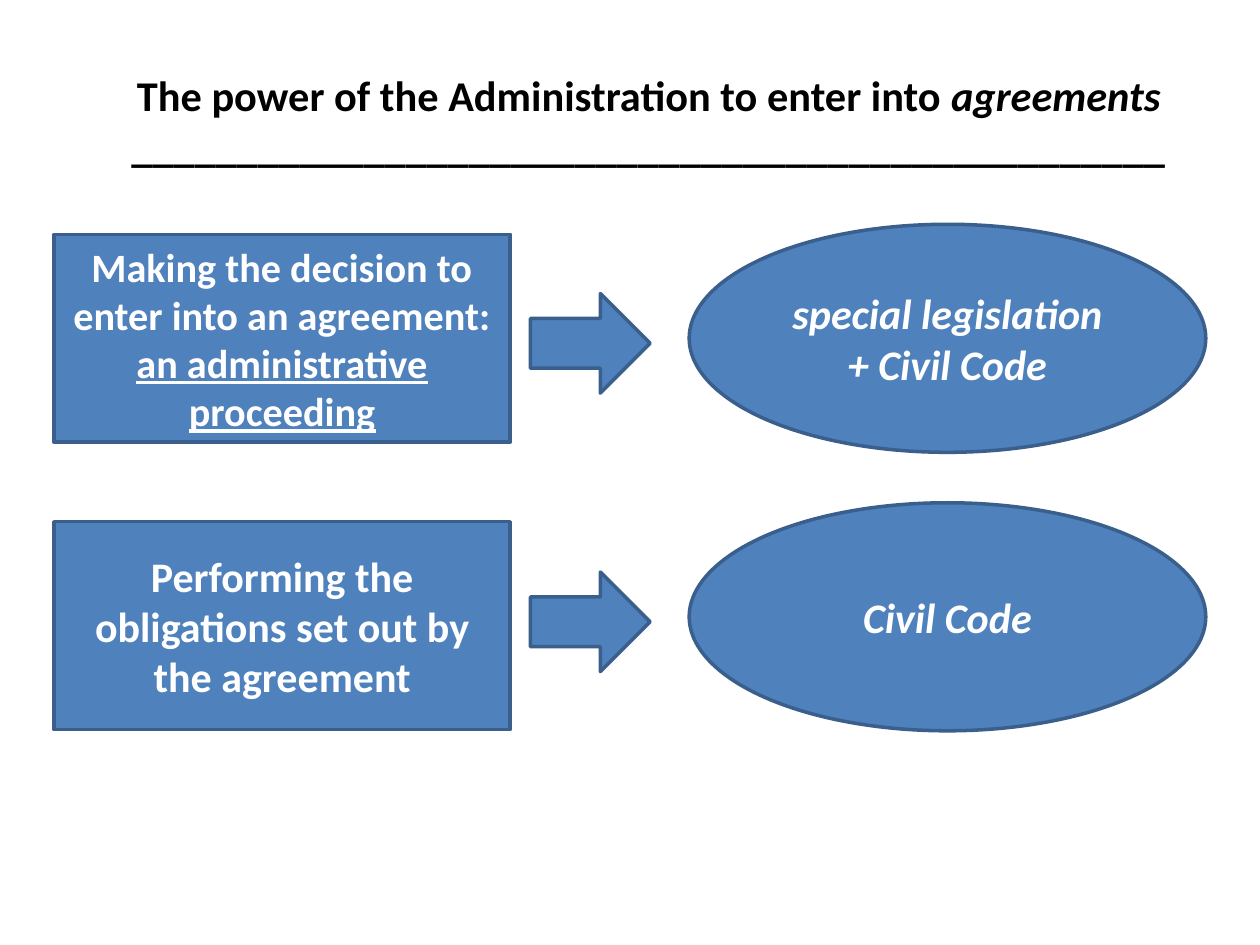
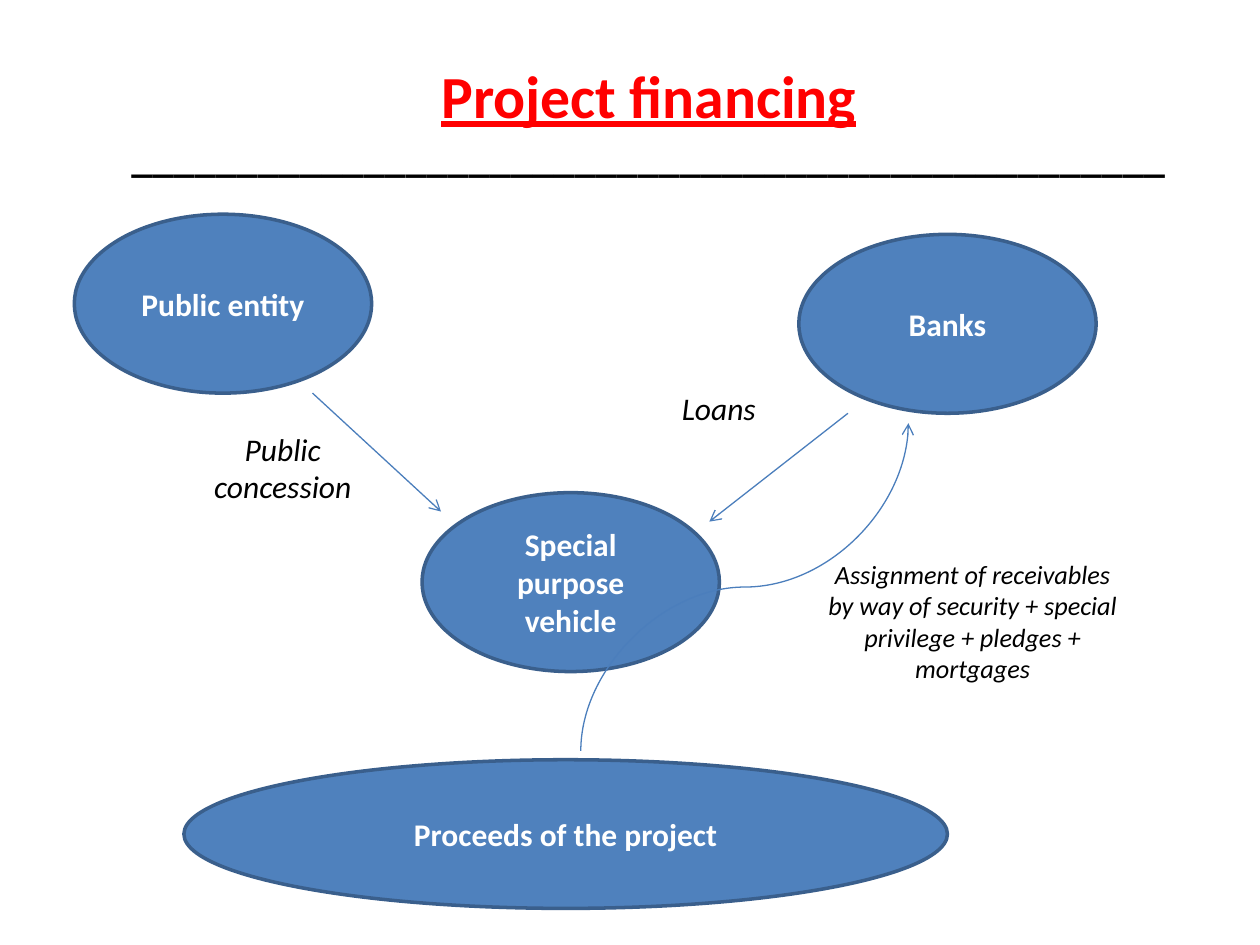
from dataclasses import dataclass

from lxml import etree
from pptx import Presentation
from pptx.dml.color import RGBColor
from pptx.enum import shapes, text
from pptx.oxml import ns
from pptx.util import Inches, Pt


@dataclass(frozen=True)
class Theme:
    font: str = "Calibri"
    fill: str = "4F81BD"
    outline: str = "3A5F8C"
    arrow: str = "4B7EBC"
    black: str = "000000"
    white: str = "FFFFFF"
    red: str = "FF0000"
    title: float = 24.2
    big_title: float = 34.1
    box: float = 24
    small_box: float = 23
    label: float = 18
    note: float = 15


T = Theme()
RULE = "_" * 49


def write(p, s, size, color=T.white, bold=False, italic=False, underline=False):
    """Add one formatted run to a centred paragraph."""
    p.alignment = text.PP_ALIGN.CENTER
    r = p.add_run()
    r.text = s
    f = r.font
    f.name, f.size, f.bold, f.italic, f.underline = T.font, Pt(size), bold, italic, underline
    f.color.rgb = RGBColor.from_string(color)


def add_block(slide, kind, at):
    """Add a blue outlined shape and return its first paragraph."""
    sp = slide.shapes.add_shape(kind, *map(Inches, at))
    sp.shadow.inherit = False
    sp.fill.solid()
    sp.fill.fore_color.rgb = RGBColor.from_string(T.fill)
    sp.line.color.rgb = RGBColor.from_string(T.outline)
    sp.line.width = Pt(2)
    tf = sp.text_frame
    tf.word_wrap = True
    tf.vertical_anchor = text.MSO_ANCHOR.MIDDLE
    return tf.paragraphs[0]


prs = Presentation()
prs.slide_width, prs.slide_height = Inches(10), Inches(7.5)
RECT = shapes.MSO_SHAPE.RECTANGLE
OVAL = shapes.MSO_SHAPE.OVAL
ARROW = shapes.MSO_SHAPE.RIGHT_ARROW

# Both slides: title with a rule of underscores below
titles = [
    [("The power of the Administration to enter into ", dict(size=T.title)),
     ("agreements", dict(size=T.title, italic=True))],
    [("Project financing", dict(size=T.big_title, color=T.red, underline=True))],
]
slides = []
for runs in titles:
    s = prs.slides.add_slide(prs.slide_layouts[5])
    sp = s.shapes.title
    sp.left, sp.top, sp.width, sp.height = map(Inches, (0.9, 0.36, 8.5, 1.18))
    tf = sp.text_frame
    tf.word_wrap = True
    tf.auto_size = text.MSO_AUTO_SIZE.NONE
    tf.vertical_anchor = text.MSO_ANCHOR.MIDDLE
    for words, style in runs:
        write(tf.paragraphs[0], words, **{"color": T.black, "bold": True, **style})
    write(tf.add_paragraph(), RULE, T.title, T.black, bold=True)
    slides.append(s)
agreements, financing = slides

# Slide 1: each row leads from a step to the law that governs it
rows = [
    (1.86, 2.33, 1.78, T.small_box,
     "Making the decision to enter into an agreement: ",
     "an administrative proceeding", "special legislation + Civil Code"),
    (4.14, 4.54, 3.99, T.box,
     "Performing the obligations set out by the agreement", "", "Civil Code"),
]
for step_top, arrow_top, law_top, size, step, stressed, law in rows:
    p = add_block(agreements, RECT, (0.43, step_top, 3.62, 1.65))
    write(p, step, size, bold=True)
    if stressed:
        write(p, stressed, size, bold=True, underline=True)
    add_block(agreements, ARROW, (4.21, arrow_top, 0.95, 0.79))
    p = add_block(agreements, OVAL, (5.47, law_top, 4.1, 1.81))
    write(p, law, T.box, bold=True, italic=True)

# Slide 2: parties and proceeds
for party, left, top, width, height in [
    ("Public entity", 0.59, 1.7, 2.36, 1.42),
    ("Special purpose vehicle", 3.35, 3.91, 2.36, 1.42),
    ("Banks", 6.34, 1.86, 2.36, 1.42),
    ("Proceeds of the project", 1.46, 6.03, 6.06, 1.18),
]:
    p = add_block(financing, OVAL, (left, top, width, height))
    write(p, party, T.label, bold=True)

# Slide 2: arrows; the curve is turned a quarter so that it leaves upwards
STRAIGHT, CURVE = shapes.MSO_CONNECTOR.STRAIGHT, shapes.MSO_CONNECTOR.CURVE
for kind, ends, turn in [
    (STRAIGHT, (2.48, 3.12, 3.5, 4.06), 0),
    (STRAIGHT, (6.73, 3.28, 5.63, 4.14), 0),
    (CURVE, (7.21, 5.96, 4.61, 3.36), 90),
]:
    cx = financing.shapes.add_connector(kind, *map(Inches, ends))
    cx.line.color.rgb = RGBColor.from_string(T.arrow)
    cx.line.width = Pt(0.75)
    spPr = cx._element.spPr
    if turn:
        spPr.find(ns.qn("a:xfrm")).set("rot", str(turn * 60000))
    etree.SubElement(spPr.find(ns.qn("a:ln")), ns.qn("a:tailEnd"), type="arrow")
    etree.SubElement(spPr, ns.qn("a:effectLst"))

# Slide 2: labels beside the arrows
for label, size, at in [
    ("Public concession", T.label, (1.46, 3.36, 1.57, 0.71)),
    ("Loans", T.label, (4.92, 3.04, 1.57, 0.4)),
    ("Assignment of receivables by way of security + special privilege + pledges + mortgages",
     T.note, (6.42, 4.38, 2.6, 1.11)),
]:
    tf = financing.shapes.add_textbox(*map(Inches, at)).text_frame
    tf.word_wrap = True
    tf.auto_size = text.MSO_AUTO_SIZE.SHAPE_TO_FIT_TEXT
    write(tf.paragraphs[0], label, size, T.black, italic=True)

prs.save("out.pptx")
